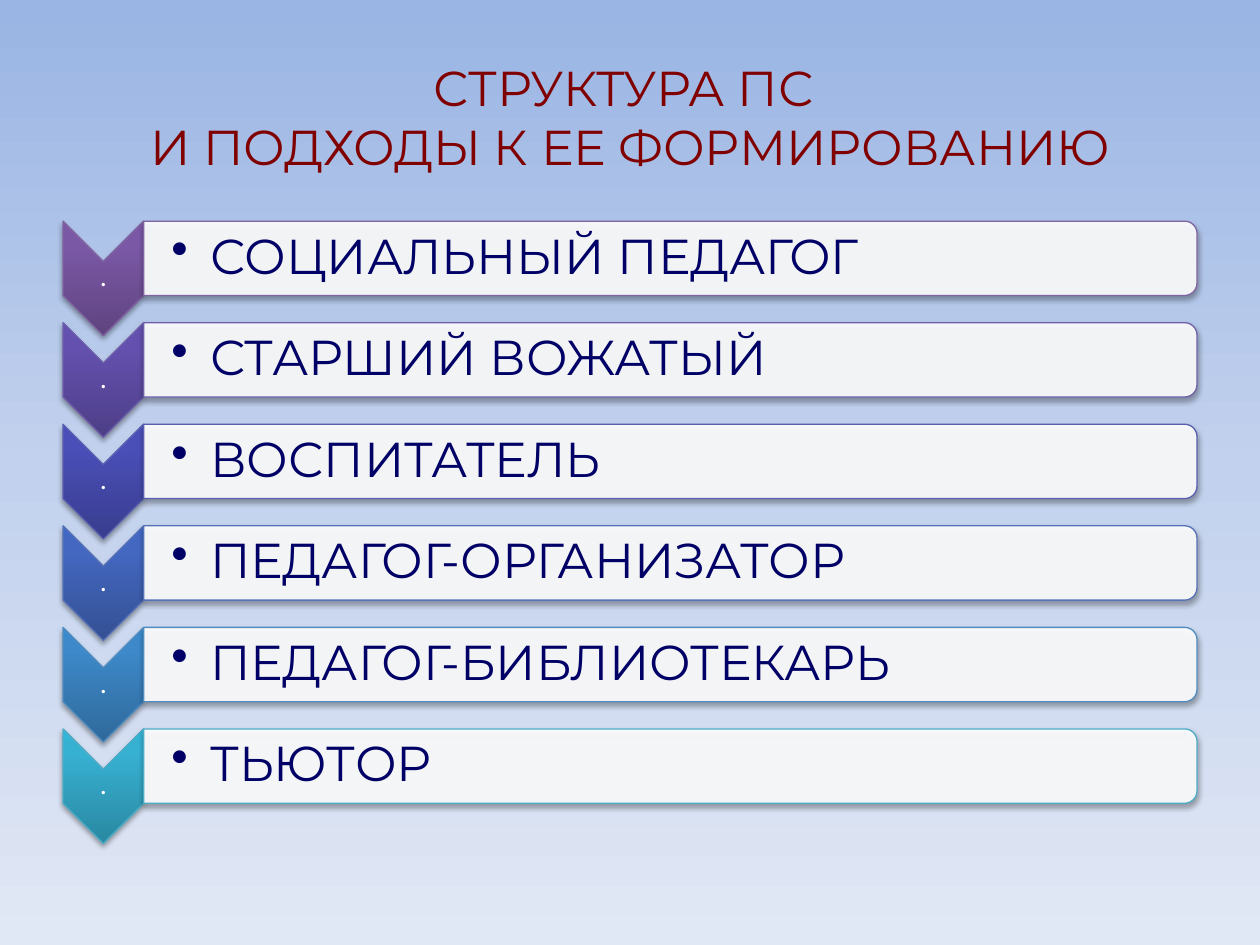
from lxml import etree
from pptx import Presentation
from pptx.dml.color import RGBColor
from pptx.enum.shapes import MSO_SHAPE
from pptx.enum.text import MSO_ANCHOR, MSO_AUTO_SIZE, PP_ALIGN
from pptx.oxml.ns import qn
from pptx.util import Inches, Pt

CHEVRON = MSO_SHAPE.CHEVRON
BAR = MSO_SHAPE.ROUND_2_SAME_RECTANGLE
MIDDLE = MSO_ANCHOR.MIDDLE
CENTER, LEFT = PP_ALIGN.CENTER, PP_ALIGN.LEFT
NO_AUTOFIT = MSO_AUTO_SIZE.NONE
TITLE_ONLY = 5

COLORS = {
    "title": "800000",
    "label": "000066",
    "white": "FFFFFF",
    "shadow": "000000",
}
BACKGROUND = [(0, "9AB5E4"), (50, "C2D1ED"), (100, "E1E8F5")]

# Label, outline colour, chevron gradient colours from bottom to top
ROLES = [
    ("СОЦИАЛЬНЫЙ ПЕДАГОГ", "8064A2", ("5F4480", "7B58A6", "7C57A8")),
    ("СТАРШИЙ ВОЖАТЫЙ", "6E5FA9", ("4D3E87", "6451AF", "6450B2")),
    ("ВОСПИТАТЕЛЬ", "5A5EB1", ("393D8E", "4A4FB8", "484EBB")),
    ("ПЕДАГОГ-ОРГАНИЗАТОР", "5572B8", ("345094", "4468C1", "4168C4")),
    ("ПЕДАГОГ-БИБЛИОТЕКАРЬ", "508CBF", ("2F699B", "3D89C9", "3B8ACD")),
    ("ТЬЮТОР", "4BACC6", ("2A88A2", "37B1D2", "34B4D6")),
]
CHEVRON_STOPS = (0, 80, 100)
ROWS_TOP = 1.78
ROWS_SPAN = 4.03  # from the first row to the last


def rgb(color):
    return RGBColor.from_string(color)


def add_color(parent, color, alpha=None):
    node = etree.SubElement(parent, qn("a:srgbClr"), val=color)
    if alpha is not None:
        etree.SubElement(node, qn("a:alpha"), val=str(alpha * 1000))


def set_gradient(fill, element, stops, angle):
    """Fill with several stops; the angle runs counter-clockwise."""
    fill.gradient()
    fill.gradient_angle = angle
    gradient = element.find(".//" + qn("a:gradFill"))
    gradient.set("rotWithShape", "0")
    stop_list = gradient.find(qn("a:gsLst"))
    for stop in list(stop_list):
        stop_list.remove(stop)
    for position, color in stops:
        stop = etree.SubElement(stop_list, qn("a:gs"), pos=str(position * 1000))
        add_color(stop, color)


def add_turned_shape(page, kind, center_x, center_y, width, height, outline):
    """Add a shape turned by 90 degrees, with an outline and a soft shadow."""
    shape = page.shapes.add_shape(
        kind, Inches(center_x - width / 2), Inches(center_y - height / 2),
        Inches(width), Inches(height))
    shape.rotation = 90
    shape.line.color.rgb = rgb(outline)
    shape.line.width = Pt(0.75)
    shape.shadow.inherit = False
    effects = shape.element.spPr.find(qn("a:effectLst"))
    shadow = etree.SubElement(
        effects, qn("a:outerShdw"), blurRad=str(Pt(3.1)), dist=str(Pt(1.8)),
        dir="5400000", rotWithShape="0")
    add_color(shadow, COLORS["shadow"], 35)
    return shape


def format_text(para, font, size, color, align):
    para.alignment = align
    para.font.name = font
    para.font.size = Pt(size)
    para.font.color.rgb = rgb(color)


def add_text(page, text, left, top, width, height, inset, left_inset):
    box = page.shapes.add_textbox(
        Inches(left), Inches(top), Inches(width), Inches(height))
    frame = box.text_frame
    frame.word_wrap = True
    frame.vertical_anchor = MIDDLE
    frame.margin_top = frame.margin_right = frame.margin_bottom = Inches(inset)
    frame.margin_left = Inches(left_inset)
    para = frame.paragraphs[0]
    para.text = text
    para.line_spacing = 0.9
    return para


def add_bullet(para, indent):
    properties = para._p.get_or_add_pPr()
    properties.set("marL", str(Inches(indent)))
    properties.set("indent", str(-Inches(indent)))
    bullet = etree.Element(qn("a:buChar"), char="•")
    properties.find(qn("a:defRPr")).addprevious(bullet)


def add_title(page):
    title = page.shapes.title
    title.left, title.top = Inches(0.5), Inches(0.3)
    title.width, title.height = Inches(9), Inches(1.25)
    frame = title.text_frame
    frame.auto_size = NO_AUTOFIT
    frame.vertical_anchor = MIDDLE
    frame.text = "СТРУКТУРА ПС \vИ ПОДХОДЫ К ЕЕ ФОРМИРОВАНИЮ"
    format_text(frame.paragraphs[0], "Montserrat", 28, COLORS["title"], CENTER)


def add_role(page, top, label, outline, shades):
    # Chevron with its dot
    chevron = add_turned_shape(
        page, CHEVRON, 0.82, top + 0.43, 0.91, 0.64, outline)
    set_gradient(chevron.fill, chevron.element, zip(CHEVRON_STOPS, shades), 90)
    dot = add_text(page, ".", 0.5, top + 0.29, 0.64, 0.27, 0.01, 0.01)
    format_text(dot, "Calibri", 16, COLORS["white"], CENTER)

    # Bar with its label
    bar = add_turned_shape(page, BAR, 5.32, top + 0.27, 0.59, 8.36, outline)
    bar.fill.solid()
    bar.fill.fore_color.rgb = rgb(COLORS["white"])
    fill_color = bar.element.spPr.find(qn("a:solidFill")).find(qn("a:srgbClr"))
    etree.SubElement(fill_color, qn("a:alpha"), val="90000")
    para = add_text(page, label, 1.14, top, 8.33, 0.54, 0.02, 0.22)
    para.level = 1
    format_text(para, "Montserrat", 28, COLORS["label"], LEFT)
    add_bullet(para, 0.31)


def main():
    deck = Presentation()
    deck.slide_width, deck.slide_height = Inches(10), Inches(7.5)
    page = deck.slides.add_slide(deck.slide_layouts[TITLE_ONLY])
    set_gradient(page.background.fill, page.element, BACKGROUND, 270)
    add_title(page)
    step = ROWS_SPAN / (len(ROLES) - 1)
    for row, role in enumerate(ROLES):
        add_role(page, ROWS_TOP + row * step, *role)
    deck.save("out.pptx")


if __name__ == "__main__":
    main()
